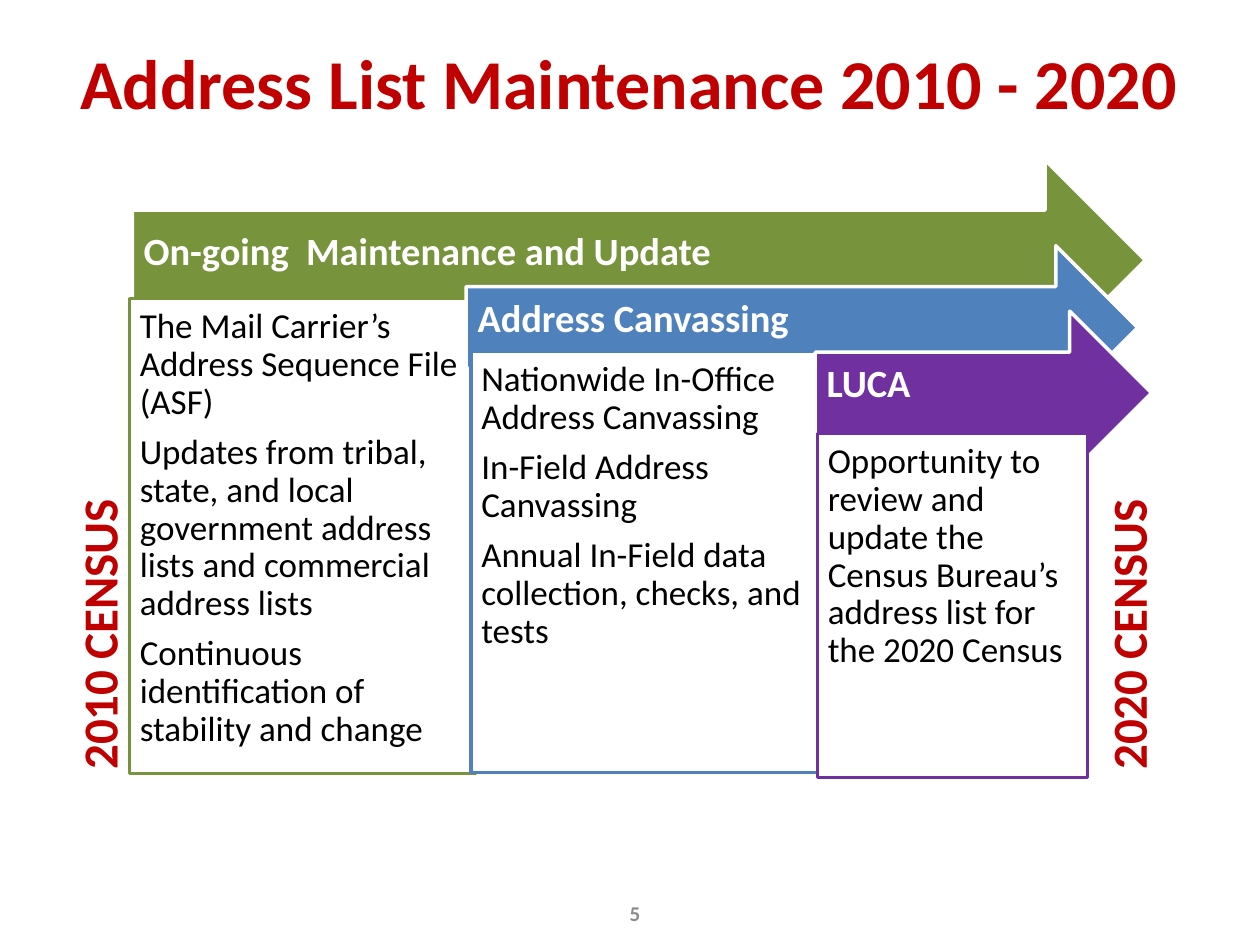
from pptx import Presentation
from pptx.dml.color import RGBColor
from pptx.enum.shapes import MSO_SHAPE
from pptx.enum.text import MSO_ANCHOR, PP_ALIGN
from pptx.util import Pt

PX = 9144  # 100 px to the inch
FONT = "Calibri"
COLORS = {"red": "C00000", "green": "77933C", "blue": "4F81BD", "purple": "7030A0",
          "white": "FFFFFF", "black": "000000", "gray": "8C8C8C"}

# Content: boxes are left, top, width, height
TITLE = ("Address List Maintenance 2010 - 2020", (49, 2, 900, 125))
PAGE_NUMBER = ("5", (4, 701, 1000, 48))
STAGES = [
    {"color": "green", "name": "On-going  Maintenance and Update",
     "arrow": (105, 127, 804, 159), "panel": (103, 237, 274, 377),
     "points": ["The Mail Carrier’s Address Sequence File (ASF)",
                "Updates from tribal, state, and local government address lists "
                "and commercial address lists",
                "Continuous identification of stability and change"]},
    {"color": "blue", "name": "Address Canvassing",
     "arrow": (370, 195, 533, 130), "panel": (374, 279, 301, 334),
     "points": ["Nationwide In-Office Address Canvassing",
                "In-Field Address Canvassing",
                "Annual In-Field data collection, checks, and tests"]},
    {"color": "purple", "name": "LUCA",
     "arrow": (647, 247, 267, 130), "panel": (649, 344, 214, 273),
     "points": ["Opportunity to review and update the Census Bureau’s address list "
                "for the 2020 Census"]},
]
CENSUS_LABELS = [("2010 CENSUS", 78), ("2020 CENSUS", 895)]  # text, centre x
LABEL_TOP, LABEL_W, LABEL_H = 475, 290, 57


def rgb(name):
    return RGBColor.from_string(COLORS[name])


def emu(box):
    return [v * PX for v in box]


def write(sp, texts, size, color, bold=True, align=PP_ALIGN.CENTER,
          anchor=MSO_ANCHOR.MIDDLE, insets=(10, 5, 10, 5), line=None, after=None):
    tf = sp.text_frame
    tf.word_wrap = True
    tf.vertical_anchor = anchor
    tf.margin_left, tf.margin_top, tf.margin_right, tf.margin_bottom = emu(insets)
    for i, text in enumerate(texts):
        p = tf.add_paragraph() if i else tf.paragraphs[0]
        p.alignment = align
        p.line_spacing = line
        p.space_after = after
        r = p.add_run()
        r.text = text
        r.font.name = FONT
        r.font.size = Pt(size)
        r.font.bold = bold
        r.font.color.rgb = rgb(color)


def add_block(s, shape, box, fill, line):
    sp = s.shapes.add_shape(shape, *emu(box))
    sp.shadow.inherit = False
    sp.fill.solid()
    sp.fill.fore_color.rgb = rgb(fill)
    sp.line.color.rgb = rgb(line)
    sp.line.width = Pt(2)
    return sp


def add_text(s, box, text, size, color, **style):
    sp = s.shapes.add_textbox(*emu(box))
    write(sp, [text], size, color, **style)
    return sp


prs = Presentation()
prs.slide_width, prs.slide_height = emu((1000, 750))
s = prs.slides.add_slide(prs.slide_layouts[6])

# Title
add_text(s, TITLE[1], TITLE[0], 40, "red")

# Overlapping stages: an arrow with a panel below it
for stage in STAGES:
    arrow = add_block(s, MSO_SHAPE.RIGHT_ARROW, stage["arrow"], stage["color"], "white")
    write(arrow, [stage["name"]], 22, "white", align=PP_ALIGN.LEFT,
          insets=(9, 9, 28, 21), line=0.9)
    panel = add_block(s, MSO_SHAPE.RECTANGLE, stage["panel"], "white", stage["color"])
    write(panel, stage["points"], 20, "black", bold=False, align=PP_ALIGN.LEFT,
          anchor=MSO_ANCHOR.TOP, insets=(8, 8, 8, 8), line=0.9, after=Pt(7))

# Vertical census labels
for text, center in CENSUS_LABELS:
    box = (center - LABEL_W // 2, LABEL_TOP, LABEL_W, LABEL_H)
    label = add_text(s, box, text, 28, "red", anchor=MSO_ANCHOR.TOP)
    label.rotation = 270

# Page number
add_text(s, PAGE_NUMBER[1], PAGE_NUMBER[0], 12, "gray")

prs.save("out.pptx")
